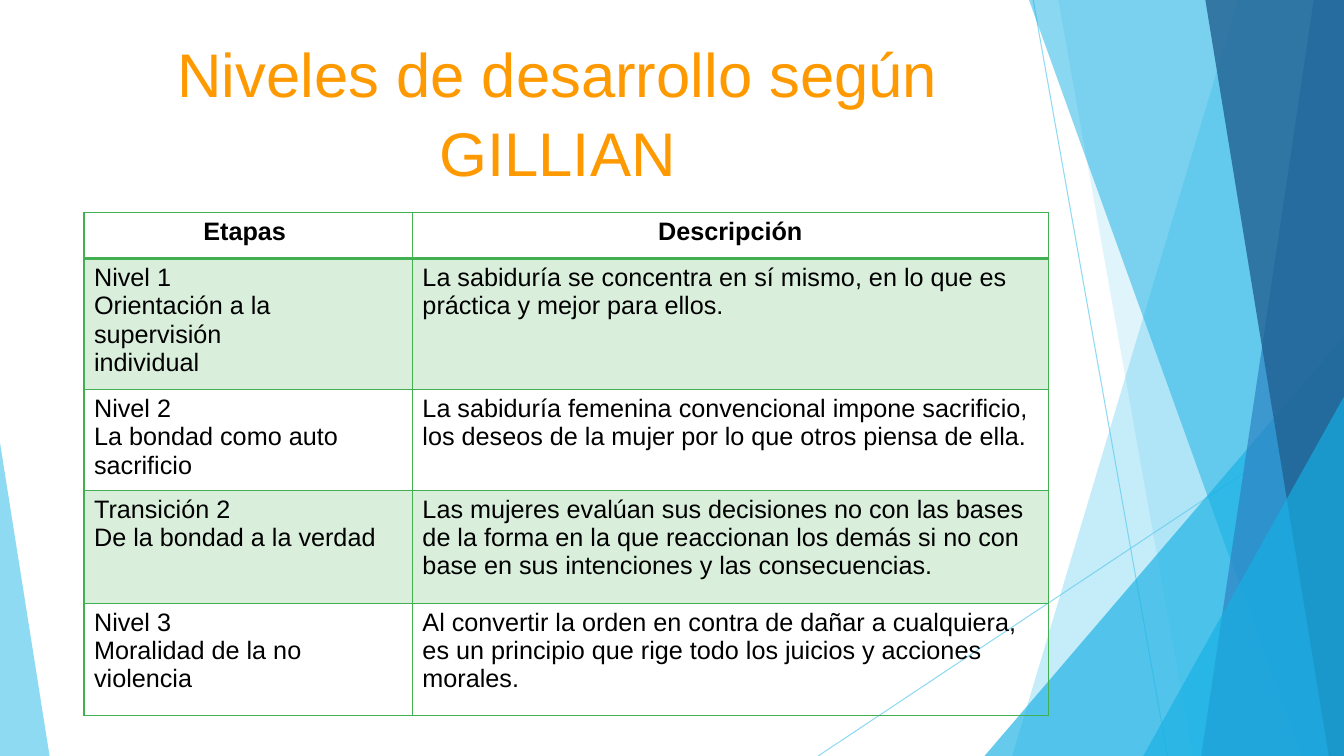
from dataclasses import dataclass

from lxml import etree
from pptx import Presentation
from pptx.dml.color import RGBColor
from pptx.enum.shapes import MSO_CONNECTOR, MSO_SHAPE
from pptx.enum.text import MSO_ANCHOR, PP_ALIGN
from pptx.oxml.ns import qn
from pptx.util import Inches, Pt

STRAIGHT = MSO_CONNECTOR.STRAIGHT
TRIANGLE = MSO_SHAPE.ISOSCELES_TRIANGLE
TOP = MSO_ANCHOR.TOP
CENTER, LEFT = PP_ALIGN.CENTER, PP_ALIGN.LEFT

# The slide is a grid of 16 columns by 9 rows
WIDTH, HEIGHT = Inches(13.333), Inches(7.5)
COLUMNS, ROWS = 16, 9


@dataclass(frozen=True)
class Theme:
    font: str = "Arial"
    title_size: int = 44
    body_size: int = 18
    title: str = "FF9900"
    text: str = "000000"
    green: str = "42B051"
    sky: str = "5FCBEF"
    cyan: str = "17B0E4"
    blue: str = "2E83C3"
    navy: str = "226292"


THEME = Theme()

TITLE = "Niveles de desarrollo según GILLIAN"
HEADINGS = ("Etapas ", "Descripción")
LEVELS = [
    (("Nivel 1", "Orientación a la supervisión", "individual"),
     "La sabiduría se concentra en sí mismo, en lo que es práctica y mejor para ellos."),
    (("Nivel 2", "La bondad como auto sacrificio"),
     "La sabiduría femenina convencional impone sacrificio, los deseos de la mujer "
     "por lo que otros piensa de ella."),
    (("Transición 2", "De la bondad a la verdad"),
     "Las mujeres evalúan sus decisiones no con las bases de la forma en la que "
     "reaccionan los demás si no con base en sus intenciones y las consecuencias."),
    (("Nivel 3", "Moralidad de la no violencia"),
     "Al convertir la orden en contra de dañar a cualquiera, es un principio que "
     "rige todo los juicios y acciones morales."),
]
COLUMN_WIDTHS = (3.91, 7.57)
ROW_HEIGHTS = (0.55, 1.34, 0.95, 1.34, 1.34)


def col(count):
    return round(WIDTH * count / COLUMNS)


def row(count):
    return round(HEIGHT * count / ROWS)


def set_opacity(parent, percent):
    for color in parent.iter(qn("a:srgbClr")):
        etree.SubElement(color, qn("a:alpha"), val=str(percent * 1000))


def paint(shape, color, opacity):
    shape.shadow.inherit = False
    shape.fill.solid()
    shape.fill.fore_color.rgb = RGBColor.from_string(color)
    shape.line.fill.background()
    set_opacity(shape._element.spPr, opacity)


def add_ray(slide, x1, y1, x2, y2):
    ray = slide.shapes.add_connector(STRAIGHT, col(x1), row(y1), col(x2), row(y2))
    ray.line.color.rgb = RGBColor.from_string(THEME.sky)
    ray.line.width = Pt(0.75)
    set_opacity(ray._element.spPr, 70)
    etree.SubElement(ray._element.spPr, qn("a:effectLst"))


def add_band(slide, top_x, bottom_x, color, opacity):
    """Fill everything from a slanted left edge to the right side of the slide."""
    outline = slide.shapes.build_freeform(col(top_x), 0)
    outline.add_line_segments(
        [(WIDTH, 0), (WIDTH, HEIGHT), (col(bottom_x), HEIGHT)], close=True)
    paint(outline.convert_to_shape(), color, opacity)


def add_corner(slide, left, top, right, apex, color, opacity):
    """A right triangle standing on the bottom of the slide."""
    corner = slide.shapes.add_shape(
        TRIANGLE, col(left), row(top), col(right - left), row(ROWS - top))
    corner.adjustments[0] = apex
    paint(corner, color, opacity)


def write(frame, lines, size, color, align=LEFT, bold=False):
    for index, line in enumerate(lines):
        paragraph = frame.paragraphs[0] if index == 0 else frame.add_paragraph()
        paragraph.alignment = align
        run = paragraph.add_run()
        run.text = line
        run.font.name = THEME.font
        run.font.size = Pt(size)
        run.font.bold = bold
        run.font.color.rgb = RGBColor.from_string(color)


def add_title(slide):
    title = slide.shapes.add_textbox(col(1), row(0.31), col(11.28), row(1.73))
    frame = title.text_frame
    frame.word_wrap = True
    frame.vertical_anchor = TOP
    write(frame, [TITLE], THEME.title_size, THEME.title, CENTER)
    frame.paragraphs[0].line_spacing = 1.07


def set_borders(cell, widths):
    properties = cell._tc.get_or_add_tcPr()
    for side, width in widths.items():
        border = etree.SubElement(properties, qn(f"a:ln{side}"), w=str(Pt(width)))
        fill = etree.SubElement(border, qn("a:solidFill"))
        etree.SubElement(fill, qn("a:srgbClr"), val=THEME.green)


def style_cell(cell, row_index):
    set_borders(cell, {"L": 1, "R": 1, "T": 2 if row_index == 1 else 1,
                       "B": 2 if row_index == 0 else 1})
    if row_index % 2:
        cell.fill.solid()
        cell.fill.fore_color.rgb = RGBColor.from_string(THEME.green)
        set_opacity(cell._tc.tcPr.find(qn("a:solidFill")), 20)
    else:
        cell.fill.background()


def add_levels_table(slide):
    levels = slide.shapes.add_table(
        len(ROW_HEIGHTS), len(COLUMN_WIDTHS), col(1), row(2.53),
        col(sum(COLUMN_WIDTHS)), row(sum(ROW_HEIGHTS))).table
    levels.horz_banding = False
    levels.first_row = False
    for column, width in zip(levels.columns, COLUMN_WIDTHS):
        column.width = col(width)
    for table_row, height in zip(levels.rows, ROW_HEIGHTS):
        table_row.height = row(height)

    contents = [[(heading,) for heading in HEADINGS]]
    contents += [(stage, (description,)) for stage, description in LEVELS]
    for row_index, entries in enumerate(contents):
        heading = row_index == 0
        for column_index, lines in enumerate(entries):
            cell = levels.cell(row_index, column_index)
            style_cell(cell, row_index)
            write(cell.text_frame, lines, THEME.body_size, THEME.text,
                  CENTER if heading else LEFT, heading)


def add_backdrop(slide):
    # Thin rays
    add_ray(slide, 12.3, 0, 13.9, 9)
    add_ray(slide, 16, 4.84, 9.74, 9)
    # Overlapping bands and corners, back to front
    add_band(slide, 14.74, 12.05, THEME.sky, 36)
    add_band(slide, 12.6, 14.2, THEME.sky, 20)
    add_corner(slide, 11.72, 4, 16, 1, THEME.cyan, 66)
    add_band(slide, 12.25, 15.49, THEME.cyan, 50)
    add_band(slide, 15.64, 14.3, THEME.blue, 70)
    add_band(slide, 14.35, 15.82, THEME.navy, 80)
    add_corner(slide, 13.61, 4.72, 16, 1, THEME.cyan, 66)
    add_corner(slide, 0, 5.27, 0.59, 0, THEME.sky, 70)


def main():
    deck = Presentation()
    deck.slide_width, deck.slide_height = WIDTH, HEIGHT
    slide = deck.slides.add_slide(deck.slide_layouts[6])
    add_backdrop(slide)
    add_title(slide)
    add_levels_table(slide)
    deck.save("out.pptx")


if __name__ == "__main__":
    main()
